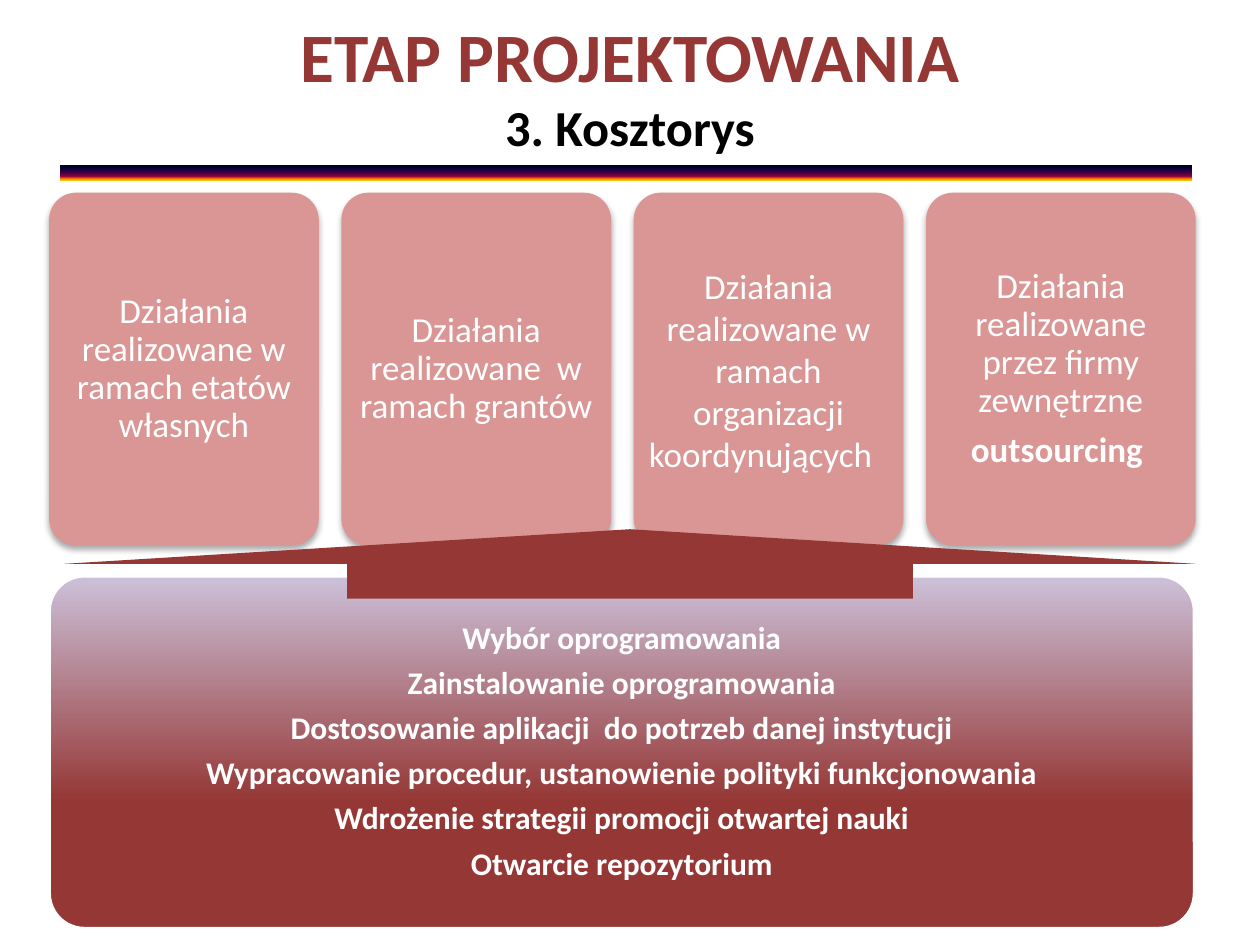
from lxml import etree
from pptx import Presentation
from pptx.dml.color import RGBColor
from pptx.enum import shapes, text
from pptx.oxml import ns
from pptx.util import Inches, Pt

FONT = "Calibri"
WHITE, BLACK, MAROON, ROSE, LAVENDER = "FFFFFF", "000000", "953735", "D99694", "CCC1DA"

CARDS = [
    [("Działania realizowane w ramach etatów własnych", False)],
    [("Działania realizowane  w ramach grantów", False)],
    [("Działania realizowane w ramach organizacji", False),
     ("koordynujących  ", False)],
    [("Działania realizowane przez firmy zewnętrzne", False),
     ("outsourcing ", True)],
]
LOOSE_CARD = 2  # the card set with full line spacing
STEPS = [
    "Wybór oprogramowania",
    "Zainstalowanie oprogramowania",
    "Dostosowanie aplikacji  do potrzeb danej instytucji",
    "Wypracowanie procedur, ustanowienie polityki funkcjonowania",
    "Wdrożenie strategii promocji otwartej nauki",
    "Otwarcie repozytorium",
]
BAR_STOPS = [(0, BLACK), (20, "000040"), (50, "400040"),
             (75, "8F0040"), (90, "F27300"), (100, "FFBF00")]
PANEL_STOPS = [(0, MAROON), (36, MAROON), (100, LAVENDER)]


def color(value):
    return RGBColor.from_string(value)


def child(parent, tag, **attributes):
    return etree.SubElement(parent, ns.qn(tag),
                            {key: str(value) for key, value in attributes.items()})


def add_block(slide, kind, left, top, width, height, fill=None):
    block = slide.shapes.add_shape(kind, Inches(left), Inches(top),
                                   Inches(width), Inches(height))
    block.shadow.inherit = False
    block.line.fill.background()
    if fill:
        block.fill.solid()
        block.fill.fore_color.rgb = color(fill)
    return block


def set_gradient(block, stops, angle):
    """Fill with (percent, colour) stops; the angle runs counter-clockwise."""
    block.fill.gradient()
    block.fill.gradient_angle = angle
    stop_list = block.element.spPr.find(".//" + ns.qn("a:gsLst"))
    for stop in list(stop_list):
        stop_list.remove(stop)
    for percent, value in stops:
        stop = child(stop_list, "a:gs", pos=percent * 1000)
        child(stop, "a:srgbClr", val=value)


def add_shadow(block):
    effects = block.element.spPr.find(ns.qn("a:effectLst"))
    shadow = child(effects, "a:outerShdw", blurRad=Pt(3.5), dist=Pt(2.2),
                   dir=90 * 60000, rotWithShape=0)
    child(child(shadow, "a:srgbClr", val=BLACK), "a:alpha", val=32000)


def add_run(paragraph, words, size, value, bold):
    run = paragraph.add_run()
    run.text = words
    run.font.name = FONT
    run.font.size = Pt(size)
    run.font.bold = bold
    run.font.color.rgb = color(value)


def write_lines(block, lines, size, margin, spacing=0.9, after=0):
    """Write centred white paragraphs from (words, bold) pairs."""
    frame = block.text_frame
    frame.word_wrap = True
    frame.vertical_anchor = text.MSO_ANCHOR.MIDDLE
    frame.margin_left = frame.margin_right = Inches(margin)
    frame.margin_top = frame.margin_bottom = Inches(margin)
    for index, (words, bold) in enumerate(lines):
        paragraph = frame.add_paragraph() if index else frame.paragraphs[0]
        paragraph.alignment = text.PP_ALIGN.CENTER
        paragraph.line_spacing = spacing
        paragraph.space_after = Pt(after)
        add_run(paragraph, words, size, WHITE, bold)


def add_title(slide):
    title = slide.shapes.add_textbox(Inches(0.5), Inches(0.05), Inches(9), Inches(1.25))
    frame = title.text_frame
    frame.word_wrap = True
    frame.vertical_anchor = text.MSO_ANCHOR.MIDDLE
    heading = frame.paragraphs[0]
    heading.alignment = text.PP_ALIGN.CENTER
    add_run(heading, "ETAP PROJEKTOWANIA", 39.6, MAROON, True)
    heading.add_line_break()
    add_run(heading, "3. Kosztorys", 28.8, BLACK, True)


def add_steps_panel(slide):
    panel = add_block(slide, shapes.MSO_SHAPE.ROUNDED_RECTANGLE, 0.39, 4.57, 9.09, 2.8)
    panel.adjustments[0] = 0.1
    set_gradient(panel, PANEL_STOPS, 90)
    panel.line.color.rgb = color(WHITE)
    panel.line.width = Pt(2)
    write_lines(panel, [(step, True) for step in STEPS], 18, 0.07, after=6.3)


def add_card(slide, index, lines):
    card = add_block(slide, shapes.MSO_SHAPE.ROUNDED_RECTANGLE,
                     0.39 + 2.32 * index, 1.53, 2.14, 2.8, ROSE)
    card.adjustments[0] = 0.1
    add_shadow(card)
    loose = index == LOOSE_CARD
    write_lines(card, lines, 20, 0.02,
                spacing=1.0 if loose else 0.9, after=0 if loose else 7)


def main():
    deck = Presentation()
    deck.slide_width, deck.slide_height = Inches(10), Inches(7.5)
    slide = deck.slides.add_slide(deck.slide_layouts[6])

    add_title(slide)
    add_steps_panel(slide)
    for index, lines in enumerate(CARDS):
        add_card(slide, index, lines)

    # Arrow from the steps to the cards
    add_block(slide, shapes.MSO_SHAPE.UP_ARROW, 0.51, 4.2, 8.98, 0.55, MAROON)

    # Bar under the title
    bar = add_block(slide, shapes.MSO_SHAPE.RECTANGLE, 0.48, 1.31, 8.98, 0.12)
    set_gradient(bar, BAR_STOPS, 270)

    deck.save("out.pptx")


if __name__ == "__main__":
    main()
